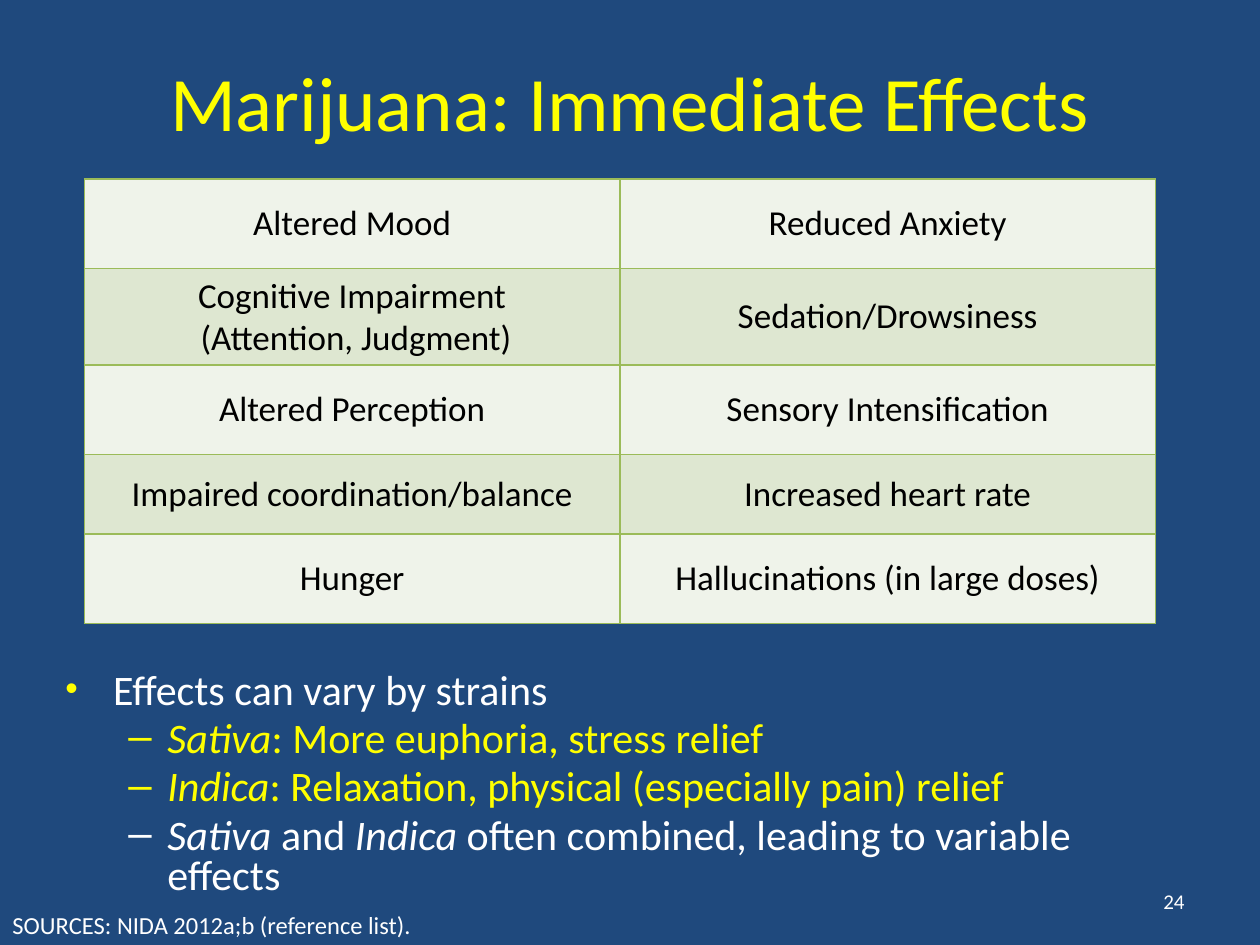
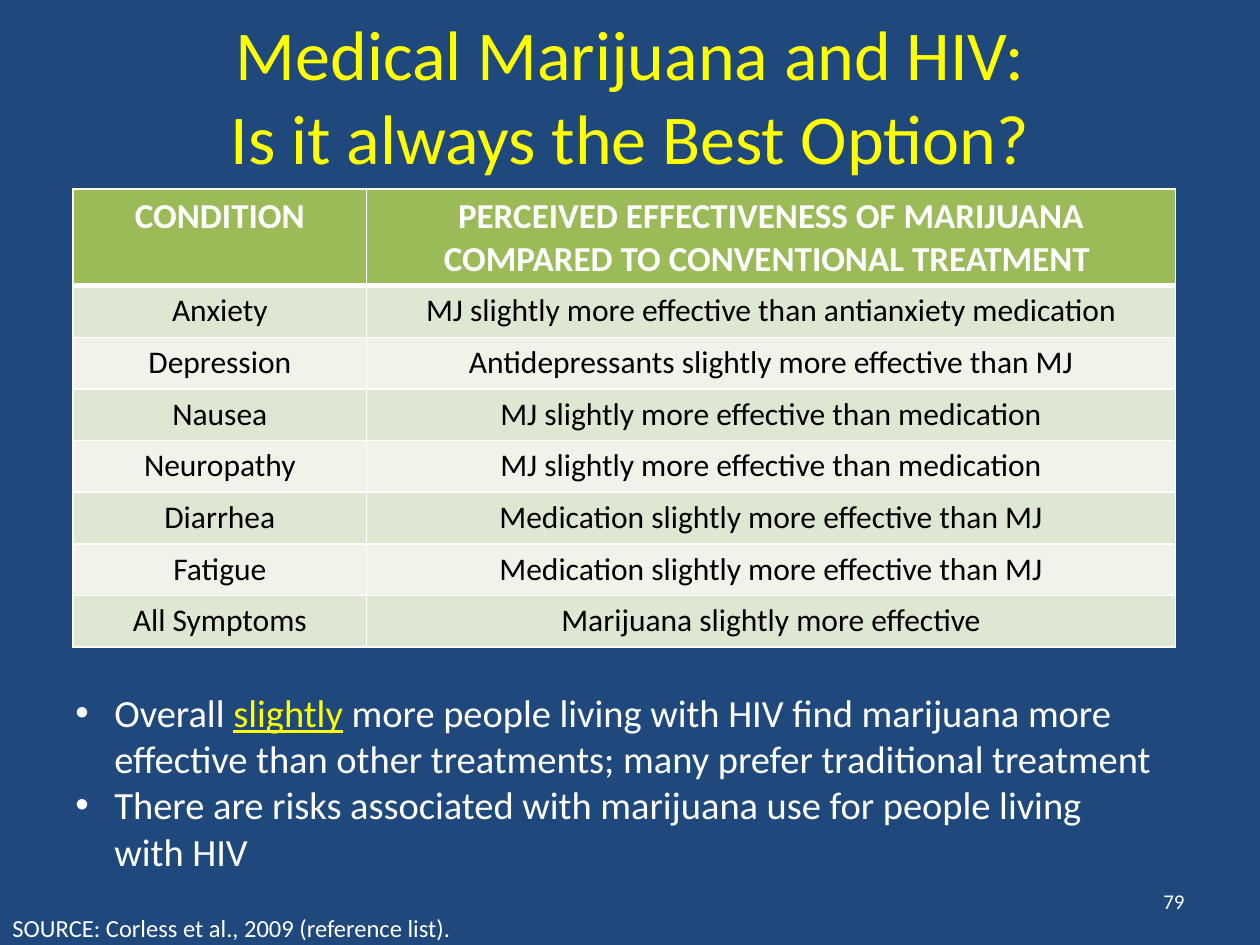
from dataclasses import dataclass

from lxml import etree
from pptx import Presentation
from pptx.dml.color import RGBColor
from pptx.enum.text import MSO_ANCHOR, PP_ALIGN
from pptx.oxml.ns import qn
from pptx.util import Inches, Pt

LEFT, CENTER, RIGHT = PP_ALIGN.LEFT, PP_ALIGN.CENTER, PP_ALIGN.RIGHT
TOP, MIDDLE, BOTTOM = MSO_ANCHOR.TOP, MSO_ANCHOR.MIDDLE, MSO_ANCHOR.BOTTOM


@dataclass(frozen=True)
class Theme:
    font: str = "Calibri"
    navy: str = "1F497D"
    yellow: str = "FFFF00"
    white: str = "FFFFFF"
    black: str = "000000"
    green: str = "9BBB59"
    pale_band: str = "EFF3EA"
    deep_band: str = "DEE7D1"
    table_size: int = 20
    row_size: int = 18
    source_size: int = 14
    number_size: int = 12


THEME = Theme()
ITALIC = {"italic": True}
YELLOW = {"color": THEME.yellow}
MAIN_BULLET = {"bullet": "•", "indent": 0.38, "hanging": 0.38,
               "bullet_color": THEME.yellow, "bullet_percent": 85}
SUB_BULLET = {"bullet": "–", "indent": 0.81, "hanging": 0.31}
PLAIN_BULLET = {"bullet": "•", "indent": 0.31, "hanging": 0.31}

SLIDES = [
    {
        "title": "Marijuana: Immediate Effects",
        "title_box": (0.5, 0.17, 9, 1.25),
        "title_size": 44,
        "table": {
            "place": (0.67, 1.42),
            "columns": (4.25, 4.25),
            "heights": (0.71, 0.71, 0.71, 0.63, 0.71),
            "border": THEME.green,
            "anchor": MIDDLE,
            "header": None,
            "bands": (THEME.pale_band, THEME.deep_band),
            "size": THEME.table_size,
            "rows": [
                ("Altered Mood", "Reduced Anxiety"),
                (["Cognitive Impairment", " (Attention, Judgment)"], "Sedation/Drowsiness"),
                ("Altered Perception", "Sensory Intensification"),
                ("Impaired coordination/balance", "Increased heart rate"),
                ("Hunger", "Hallucinations (in large doses)"),
            ],
        },
        "body_box": (0.42, 5.2, 8.92, 1.98),
        "body_format": {"size": 24, "anchor": BOTTOM, "line_spacing": 0.8, "space_before": 4.5},
        "body": [
            (["Effects can vary by strains"], MAIN_BULLET),
            ([("Sativa", ITALIC), ": More euphoria, stress relief"], SUB_BULLET | YELLOW),
            ([("Indica", ITALIC), ": Relaxation, physical (especially pain) relief"],
             SUB_BULLET | YELLOW),
            ([("Sativa", ITALIC), " and ", ("Indica", ITALIC),
              " often combined, leading to variable effects"], SUB_BULLET),
        ],
        "source": "SOURCES: NIDA 2012a;b (reference list).",
        "source_box": (0, 7.17, 3.39, 0.33),
        "number": "24",
    },
    {
        "title": "Medical Marijuana and HIV:\nIs it always the Best Option?",
        "title_box": (0, 0.25, 10, 1),
        "title_size": 40,
        "table": {
            "place": (0.58, 1.5),
            "columns": (2.33, 6.42),
            "heights": (0.41,) * 8,
            "border": THEME.white,
            "anchor": TOP,
            "header": ("CONDITION", "PERCEIVED EFFECTIVENESS OF MARIJUANA "
                                    "COMPARED TO CONVENTIONAL TREATMENT "),
            "bands": (THEME.deep_band, THEME.pale_band),
            "size": THEME.row_size,
            "rows": [
                ("Anxiety", "MJ slightly more effective than antianxiety medication"),
                ("Depression", "Antidepressants slightly more effective than MJ"),
                ("Nausea", "MJ slightly more effective than medication"),
                ("Neuropathy", "MJ slightly more effective than medication"),
                ("Diarrhea", "Medication slightly more effective than MJ"),
                ("Fatigue", "Medication slightly more effective than MJ"),
                ("All Symptoms", "Marijuana slightly more effective"),
            ],
        },
        "body_box": (0.5, 5.42, 8.92, 1.58),
        "body_format": {"size": 22},
        "body": [
            (["Overall ", ("slightly", YELLOW | {"underline": True}),
              " more people living with HIV find marijuana more effective than "
              "other treatments; many prefer traditional treatment"], PLAIN_BULLET),
            (["There are risks associated with marijuana use for people living \nwith HIV"],
             PLAIN_BULLET),
        ],
        "source": "SOURCE: Corless et al., 2009 (reference list).",
        "source_box": (0, 7.2, 3.71, 0.3),
        "number": "79",
    },
]


def add_child(parent, tag, **attributes):
    return etree.SubElement(parent, qn(tag), attributes)


def set_bullet(paragraph, style):
    properties = paragraph._p.get_or_add_pPr()
    properties.set("marL", str(Inches(style["indent"])))
    properties.set("indent", str(-Inches(style["hanging"])))
    if "bullet_color" in style:
        color = add_child(properties, "a:buClr")
        add_child(color, "a:srgbClr", val=style["bullet_color"])
        add_child(properties, "a:buSzPct", val=str(style["bullet_percent"] * 1000))
    add_child(properties, "a:buFont", typeface="Arial")
    add_child(properties, "a:buChar", char=style["bullet"])


def add_run(paragraph, text, style):
    for index, line in enumerate(text.split("\n")):
        if index:
            paragraph.add_line_break()
        run = paragraph.add_run()
        run.text = line
        font = run.font
        font.name = THEME.font
        font.size = Pt(style["size"])
        font.color.rgb = RGBColor.from_string(style.get("color", THEME.white))
        font.bold = style.get("bold", False)
        font.italic = style.get("italic", False)
        font.underline = style.get("underline", False)


def write_text(frame, content, align=LEFT, line_spacing=None, space_before=None, **style):
    lines = [content] if isinstance(content, str) else content
    for index, line in enumerate(lines):
        runs, own_style = ([line], {}) if isinstance(line, str) else line
        paragraph = frame.add_paragraph() if index else frame.paragraphs[0]
        paragraph.alignment = align
        if line_spacing:
            paragraph.line_spacing = line_spacing
        if space_before:
            paragraph.space_before = Pt(space_before)
        if "bullet" in own_style:
            set_bullet(paragraph, own_style)
        for run in runs:
            text, run_style = (run, {}) if isinstance(run, str) else run
            add_run(paragraph, text, style | own_style | run_style)


def add_text(slide, content, box, anchor=TOP, wrap=True, **style):
    frame = slide.shapes.add_textbox(*map(Inches, box)).text_frame
    frame.word_wrap = wrap
    frame.vertical_anchor = anchor
    write_text(frame, content, **style)


def set_borders(cell, color, widths):
    properties = cell._tc.get_or_add_tcPr()
    for side, width in zip("LRTB", widths):
        line = add_child(properties, f"a:ln{side}", w=str(Pt(width)))
        add_child(add_child(line, "a:solidFill"), "a:srgbClr", val=color)


def add_table(slide, data):
    header = [data["header"]] if data["header"] else []
    rows = header + data["rows"]
    columns, heights = data["columns"], data["heights"]
    size = map(Inches, (*data["place"], sum(columns), sum(heights)))
    table = slide.shapes.add_table(len(rows), len(columns), *size).table
    table.first_row = table.horz_banding = False
    for column, width in zip(table.columns, columns):
        column.width = Inches(width)
    for row_index, (row, height, texts) in enumerate(zip(table.rows, heights, rows)):
        row.height = Inches(height)
        is_header = row_index < len(header)
        if is_header:
            fill = THEME.green
            style = {"size": THEME.table_size, "color": THEME.white, "bold": True}
        else:
            fill = data["bands"][(row_index - len(header)) % 2]
            style = {"size": data["size"], "color": THEME.black}
        top = 3 if header and row_index == 1 else 1
        bottom = 3 if is_header else 1
        for cell, text in zip(row.cells, texts):
            set_borders(cell, data["border"], (1, 1, top, bottom))
            cell.fill.solid()
            cell.fill.fore_color.rgb = RGBColor.from_string(fill)
            cell.vertical_anchor = data["anchor"]
            write_text(cell.text_frame, text, align=CENTER, **style)


def build_slide(presentation, data):
    slide = presentation.slides.add_slide(presentation.slide_layouts[6])
    add_text(slide, data["title"], data["title_box"], anchor=MIDDLE, align=CENTER,
             size=data["title_size"], color=THEME.yellow)
    add_text(slide, data["body"], data["body_box"], **data["body_format"])
    add_table(slide, data["table"])
    add_text(slide, data["number"], (7.17, 6.95, 2.33, 0.4), anchor=MIDDLE, align=RIGHT,
             size=THEME.number_size)
    add_text(slide, data["source"], data["source_box"], wrap=False, size=THEME.source_size)


def main():
    presentation = Presentation()
    presentation.slide_width, presentation.slide_height = Inches(10), Inches(7.5)
    background = presentation.slide_master.background.fill
    background.solid()
    background.fore_color.rgb = RGBColor.from_string(THEME.navy)
    for data in SLIDES:
        build_slide(presentation, data)
    presentation.save("out.pptx")


if __name__ == "__main__":
    main()
